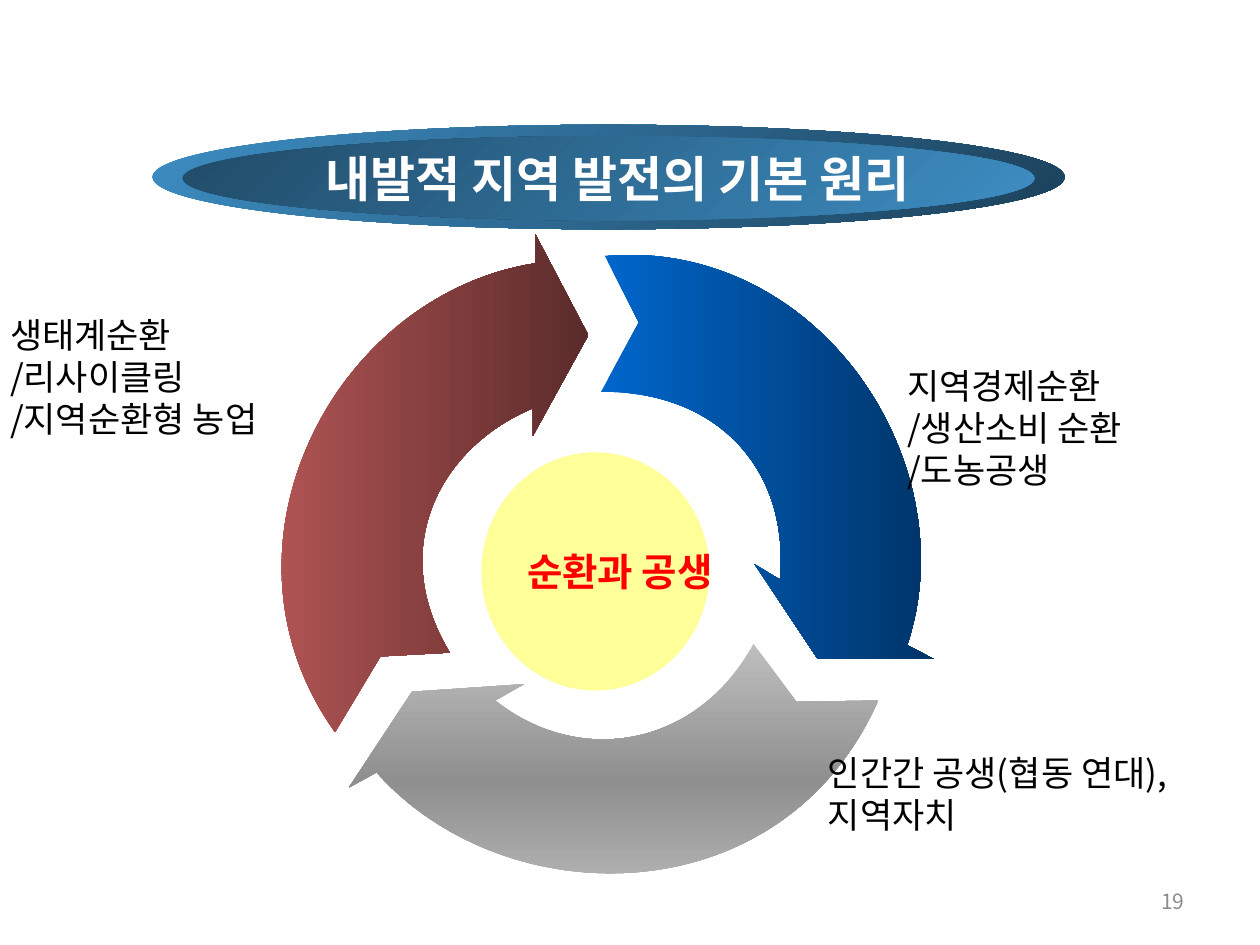
from copy import deepcopy
from pptx import Presentation
from pptx.dml.color import RGBColor
from pptx.enum.shapes import MSO_SHAPE as Shape
from pptx.enum.text import MSO_ANCHOR as Anchor, PP_ALIGN as Align
from pptx.oxml.ns import qn
from pptx.util import Inches, Pt

FONT = "Noto Sans CJK KR"

# Each outline starts at its first point; six numbers are a cubic curve.
ARROWS = [
    ([(4.8, 2.03), (5.07, 2.56), (4.77, 3.11),
      (5.7, 3.1, 6.27, 3.73, 6.19, 4.6), (5.99, 4.48), (6.49, 5.23),
      (7.41, 5.23), (7.2, 5.12), (7.68, 3.69, 6.51, 1.89, 4.8, 2.03)],
     ["0066CC", "002F5E"], 0),
    ([(6.97, 5.56), (6.32, 5.57), (5.98, 5.11),
      (5.55, 5.92, 4.61, 6.1, 3.93, 5.56), (4.16, 5.43), (3.27, 5.49),
      (2.77, 6.25), (2.99, 6.13), (4, 7.27, 6.2, 7.29, 6.97, 5.56)],
     ["BEBEBE", "8F8F8F", "BEBEBE"], 90),
    ([(2.66, 5.81), (3.02, 5.21), (3.57, 5.18),
      (3.07, 4.35, 3.49, 3.55, 4.23, 3.24), (4.23, 3.46), (4.67, 2.66),
      (4.25, 1.86), (4.25, 2.09), (2.65, 2.34, 1.61, 4.34, 2.66, 5.81)],
     ["C55D5D", "5B2B2B"], 0),
]
LABELS = [
    ((7.2, 3.2, 2.2, 0.38), ["지역경제순환", "/생산소비 순환", "/도농공생"]),
    ((6.57, 5.99, 3.03, 0.61), ["인간간 공생(협동 연대), 지역자치"]),
    ((0.08, 2.65, 2.56, 0.67), ["생태계순환", "/리사이클링", "/지역순환형 농업"]),
]


def color(hex_code):
    return RGBColor.from_string(hex_code)


def blend(shape, colors, angle):
    """Fill with evenly spaced gradient stops; angle runs clockwise."""
    shape.shadow.inherit = False
    shape.line.fill.background()
    fill = shape.fill
    fill.gradient()
    fill.gradient_angle = -angle % 360
    stops = shape._element.spPr.find(qn("a:gradFill")).find(qn("a:gsLst"))
    while len(stops) < len(colors):
        stops.append(deepcopy(stops[0]))
    for i, (stop, code) in enumerate(zip(fill.gradient_stops, colors)):
        stop.position = i / (len(colors) - 1)
        stop.color.rgb = color(code)


def write(shape, lines, size, code, bold=False, align=Align.LEFT,
          wrap=True, inset=None):
    frame = shape.text_frame
    frame.text = "\n".join(lines)
    frame.word_wrap = wrap
    frame.vertical_anchor = Anchor.MIDDLE
    if inset is not None:
        frame.margin_left = frame.margin_right = Inches(inset)
        frame.margin_top = frame.margin_bottom = Inches(inset)
    for para in frame.paragraphs:
        para.alignment = align
        font = para.font
        font.name, font.size, font.bold = FONT, Pt(size), bold
        font.color.rgb = color(code)
        east = font._element.makeelement(qn("a:ea"), {"typeface": FONT})
        font._element.find(qn("a:latin")).addnext(east)


def ellipse(slide, box):
    return slide.shapes.add_shape(Shape.OVAL, *map(Inches, box))


def banner(slide, box):
    """Title on two nested ellipses with opposing gradients."""
    x, y, w, h = box
    inner = (x + 0.24, y + 0.09, w - 0.48, h - 0.16)
    blend(ellipse(slide, box), ["3D8DC3", "1C415A"], 45)
    blend(ellipse(slide, inner), ["214B68", "3D8DC3"], 45)
    title = slide.shapes.title
    title.left, title.top, title.width, title.height = map(Inches, inner)
    title.left += Inches(0.07)
    write(title, ["내발적 지역 발전의 기본 원리"], 28, "FFFFFF", True,
          Align.CENTER)
    slide.shapes._spTree.append(title._element)  # in front of the ellipses


def bend(shape, outline):
    """Join the three line steps of each six-number part into one curve."""
    steps = list(shape._element.iter(qn("a:lnTo")))
    for part in outline[1:]:
        if len(part) == 2:
            steps.pop(0)
            continue
        trio, steps = steps[:3], steps[3:]
        curve = trio[0].makeelement(qn("a:cubicBezTo"), {})
        trio[0].addprevious(curve)
        for step in trio:
            curve.append(step[0])
            step.getparent().remove(step)


def arrow(slide, outline, colors, angle):
    points = [(Inches(part[i]), Inches(part[i + 1]))
              for part in outline for i in range(0, len(part), 2)]
    pen = slide.shapes.build_freeform(*points[0])
    pen.add_line_segments(points[1:], close=True)
    shape = pen.convert_to_shape()
    bend(shape, outline)
    blend(shape, colors, angle)


def core(slide, box):
    disc = ellipse(slide, box)
    disc.shadow.inherit = False
    disc.fill.solid()
    disc.fill.fore_color.rgb = color("FFFF99")
    disc.line.fill.background()
    write(disc, ["순환과 공생"], 22, "FF0000", True, wrap=False)


def label(slide, box, lines):
    text = slide.shapes.add_textbox(*map(Inches, box))
    write(text, lines, 20, "000000", inset=0)


def number(slide, box):
    text = slide.shapes.add_textbox(*map(Inches, box))
    write(text, ["19"], 12, "8C8C8C", align=Align.RIGHT)


def main():
    deck = Presentation()
    deck.slide_width, deck.slide_height = Inches(10), Inches(7.5)
    slide = deck.slides.add_slide(deck.slide_layouts[5])
    banner(slide, (1.21, 0.99, 7.24, 0.83))
    for (outline, colors, angle), (box, lines) in zip(ARROWS, LABELS):
        arrow(slide, outline, colors, angle)
        label(slide, box, lines)
    core(slide, (3.82, 3.59, 1.81, 1.89))
    number(slide, (7.17, 6.95, 2.33, 0.4))
    deck.save("out.pptx")


if __name__ == "__main__":
    main()
